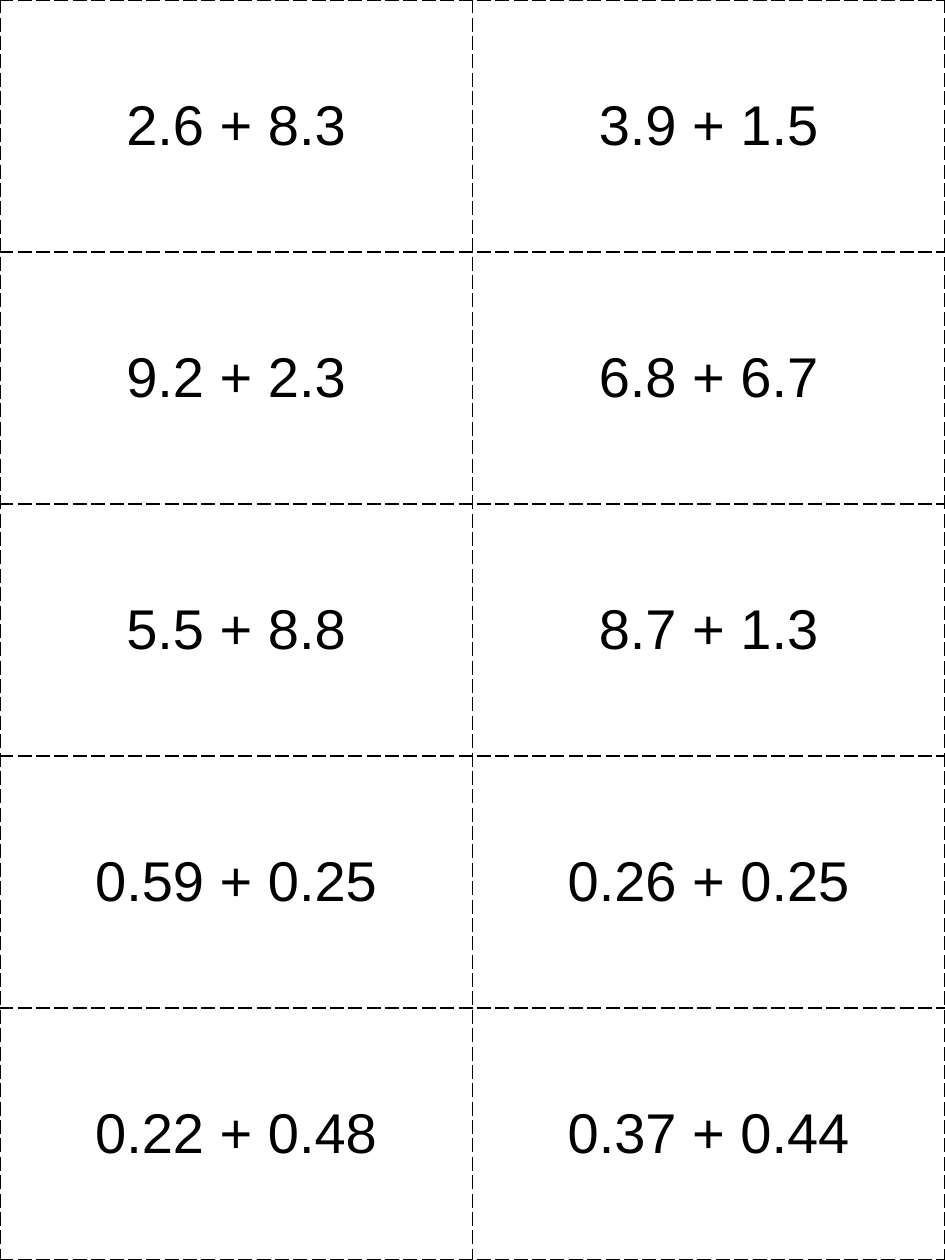
import dataclasses

import lxml.etree
import pptx
import pptx.dml.color
import pptx.enum.text
import pptx.oxml.ns
import pptx.util

Inches = pptx.util.Inches


@dataclasses.dataclass(frozen=True)
class Theme:
    font: str = "Arial"
    size: int = 32
    ink: str = "000000"
    edge: int = 1
    dash: str = "lgDash"


@dataclasses.dataclass(frozen=True)
class Card:
    row: int
    col: int
    sum: str


THEME = Theme()
WIDTH, HEIGHT = 7.5, 10
SUMS = [
    ("2.6 + 8.3", "3.9 + 1.5"),
    ("9.2 + 2.3", "6.8 + 6.7"),
    ("5.5 + 8.8", "8.7 + 1.3"),
    ("0.59 + 0.25", "0.26 + 0.25"),
    ("0.22 + 0.48", "0.37 + 0.44"),
]
CARDS = [
    Card(row, col, text)
    for row, pair in enumerate(SUMS)
    for col, text in enumerate(pair)
]


def add_edges(cell: pptx.table._Cell) -> None:
    """Draw the dashed cutting lines on all four sides."""
    qn = pptx.oxml.ns.qn
    props = cell._tc.get_or_add_tcPr()
    for spot, side in enumerate(("a:lnL", "a:lnR", "a:lnT", "a:lnB")):
        line = lxml.etree.Element(qn(side), w=str(pptx.util.Pt(THEME.edge)))
        fill = lxml.etree.SubElement(line, qn("a:solidFill"))
        lxml.etree.SubElement(fill, qn("a:srgbClr"), val=THEME.ink)
        lxml.etree.SubElement(line, qn("a:prstDash"), val=THEME.dash)
        props.insert(spot, line)


def draw_card(table: pptx.table.Table, card: Card) -> None:
    cell = table.cell(card.row, card.col)
    cell.fill.background()
    cell.vertical_anchor = pptx.enum.text.MSO_ANCHOR.MIDDLE
    add_edges(cell)

    # Sum in the middle of the card
    cell.text_frame.text = card.sum
    para = cell.text_frame.paragraphs[0]
    para.alignment = pptx.enum.text.PP_ALIGN.CENTER
    font = para.runs[0].font
    font.name = THEME.font
    font.size = pptx.util.Pt(THEME.size)
    font.bold = False
    font.color.rgb = pptx.dml.color.RGBColor.from_string(THEME.ink)


def main() -> None:
    deck = pptx.Presentation()
    deck.slide_width, deck.slide_height = Inches(WIDTH), Inches(HEIGHT)
    slide = deck.slides.add_slide(deck.slide_layouts[6])

    # Grid of equal cards that fills the page
    table = slide.shapes.add_table(
        len(SUMS), len(SUMS[0]), 0, 0, Inches(WIDTH), Inches(HEIGHT)
    ).table
    table.first_row = table.horz_banding = False
    for card in CARDS:
        draw_card(table, card)

    deck.save("out.pptx")


if __name__ == "__main__":
    main()
